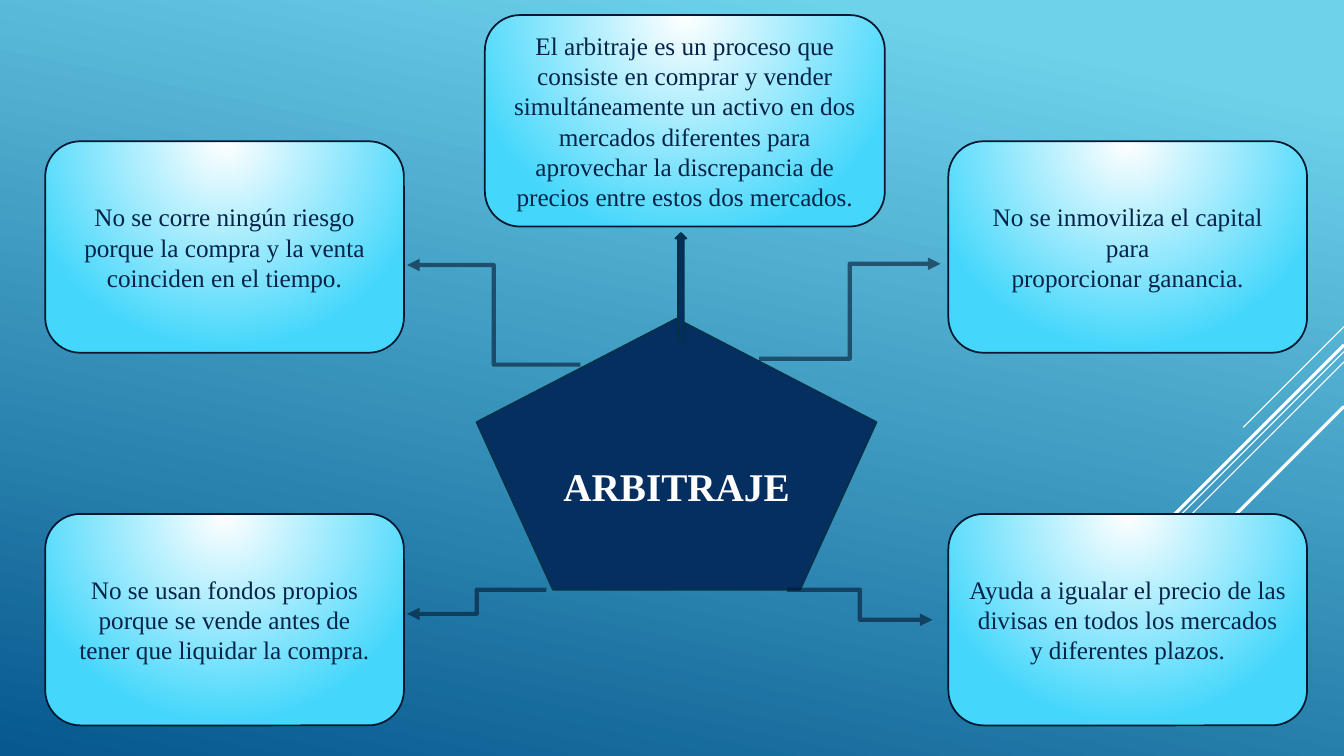
from lxml.etree import SubElement
from pptx import Presentation
from pptx.dml.color import RGBColor
from pptx.enum.shapes import MSO_CONNECTOR, MSO_SHAPE
from pptx.enum.text import MSO_ANCHOR, PP_ALIGN
from pptx.oxml.ns import qn
from pptx.util import Cm, Pt

WHITE = RGBColor(0xFF, 0xFF, 0xFF)
SKY = RGBColor(0x6E, 0xD2, 0xEB)
DEEP = RGBColor(0x06, 0x58, 0x8E)
CYAN = RGBColor(0x45, 0xD7, 0xFB)
NAVY = RGBColor(0x05, 0x2F, 0x61)
INK = RGBColor(0x04, 0x23, 0x49)
EDGE = RGBColor(0x03, 0x17, 0x30)
RIM = RGBColor(0x04, 0x31, 0x48)

BODY = {"name": "Times New Roman", "size": Pt(18), "bold": False}
HEAD = {"name": "Times New Roman", "size": Pt(28), "bold": True}

LEFT, RIGHT, HIGH, LOW = 1.14, 23.9, 3.56, 12.95
WIDE, TALL = 9.04, 5.33
SLIDE_W, SLIDE_H = 33.87, 19.05

CARDS = [
    (LEFT, HIGH, WIDE, ["No se corre ningún riesgo", "porque la compra y la venta",
                        "coinciden en el tiempo."]),
    (12.22, 0.38, 10.08, ["El arbitraje es un proceso que consiste en comprar y vender "
                          "simultáneamente un activo en dos mercados diferentes para",
                          "aprovechar la discrepancia de precios entre estos dos mercados."]),
    (RIGHT, HIGH, WIDE, ["No se inmoviliza el capital para", "proporcionar ganancia."]),
    (LEFT, LOW, WIDE, ["No se usan fondos propios", "porque se vende antes de",
                       "tener que liquidar la compra."]),
    (RIGHT, LOW, WIDE, ["Ayuda a igualar el precio de las",
                        "divisas en todos los mercados y diferentes plazos."]),
]
RAYS = [(8.23, 2.54, 0.75), (8.86, 8.28, 0.75), (9.12, 5.27, 0.75),
        (8.69, 4.85, 2.25), (10.24, 3.53, 2.25)]
LINKS = [(19.84, 14.86, 23.5, 15.62), (13.77, 14.86, 10.26, 15.47),
         (14.63, 9.19, 10.26, 6.68), (19.13, 9.04, 23.7, 6.65)]


def blend(fill, stops):
    """Give a fill a two-stop gradient."""
    fill.gradient()
    for stop, (place, color) in zip(fill.gradient_stops, stops):
        stop.position = place
        stop.color.rgb = color


def glow(shape):
    """Fill a shape with light spreading from its top edge."""
    blend(shape.fill, [(0, WHITE), (1, CYAN)])
    grad = shape.element.spPr.find(qn("a:gradFill"))
    grad.remove(grad.find(qn("a:lin")))
    ring = SubElement(grad, qn("a:path"), {"path": "circle"})
    SubElement(ring, qn("a:fillToRect"), {"b": "100000"})


def form(slide, kind, box, edge):
    """Add an outlined navy shape without shadow."""
    shape = slide.shapes.add_shape(kind, *map(Cm, box))
    shape.shadow.inherit = False
    shape.fill.solid()
    shape.fill.fore_color.rgb = NAVY
    shape.line.color.rgb = edge
    shape.line.width = Pt(1.25)
    return shape


def write(shape, lines, style, color):
    """Write centred paragraphs into a shape."""
    frame = shape.text_frame
    frame.word_wrap = True
    frame.vertical_anchor = MSO_ANCHOR.MIDDLE
    frame.text = "\n".join(lines)
    for para in frame.paragraphs:
        para.alignment = PP_ALIGN.CENTER
        for name, value in style.items():
            setattr(para.font, name, value)
        para.font.color.rgb = color


def wire(slide, kind, ends, color, width):
    """Add a connector without shadow."""
    line = slide.shapes.add_connector(kind, *map(Cm, ends))
    line.line.color.rgb = color
    line.line.width = Pt(width)
    SubElement(line.element.spPr, qn("a:effectLst"))
    return line


def link(slide, ends):
    """Add a translucent bent arrow."""
    line = wire(slide, MSO_CONNECTOR.ELBOW, ends, EDGE, 3)
    pen = line.element.spPr.find(qn("a:ln"))
    tint = pen.find(qn("a:solidFill")).find(qn("a:srgbClr"))
    SubElement(tint, qn("a:alpha"), {"val": "60000"})
    SubElement(pen, qn("a:tailEnd"), {"type": "triangle"})


def main():
    """Build and save the slide."""
    deck = Presentation()
    deck.slide_width, deck.slide_height = Cm(SLIDE_W), Cm(SLIDE_H)
    slide = deck.slides.add_slide(deck.slide_layouts[6])
    back = slide.background.fill
    blend(back, [(0.1, SKY), (1, DEEP)])
    back.gradient_angle = 258
    for top, run, width in RAYS:
        ends = (SLIDE_W, top, SLIDE_W - run, top + run)
        wire(slide, MSO_CONNECTOR.STRAIGHT, ends, WHITE, width)
    for left, top, width, lines in CARDS:
        card = form(slide, MSO_SHAPE.ROUNDED_RECTANGLE, (left, top, width, TALL), EDGE)
        glow(card)
        write(card, lines, BODY, INK)
    core = form(slide, MSO_SHAPE.REGULAR_PENTAGON, (12.01, 8.03, 10.08, 6.83), RIM)
    write(core, ["ARBITRAJE"], HEAD, WHITE)
    for ends in LINKS:
        link(slide, ends)
    form(slide, MSO_SHAPE.UP_ARROW, (17.02, 5.87, 0.28, 2.72), RIM)
    deck.save("out.pptx")


if __name__ == "__main__":
    main()
